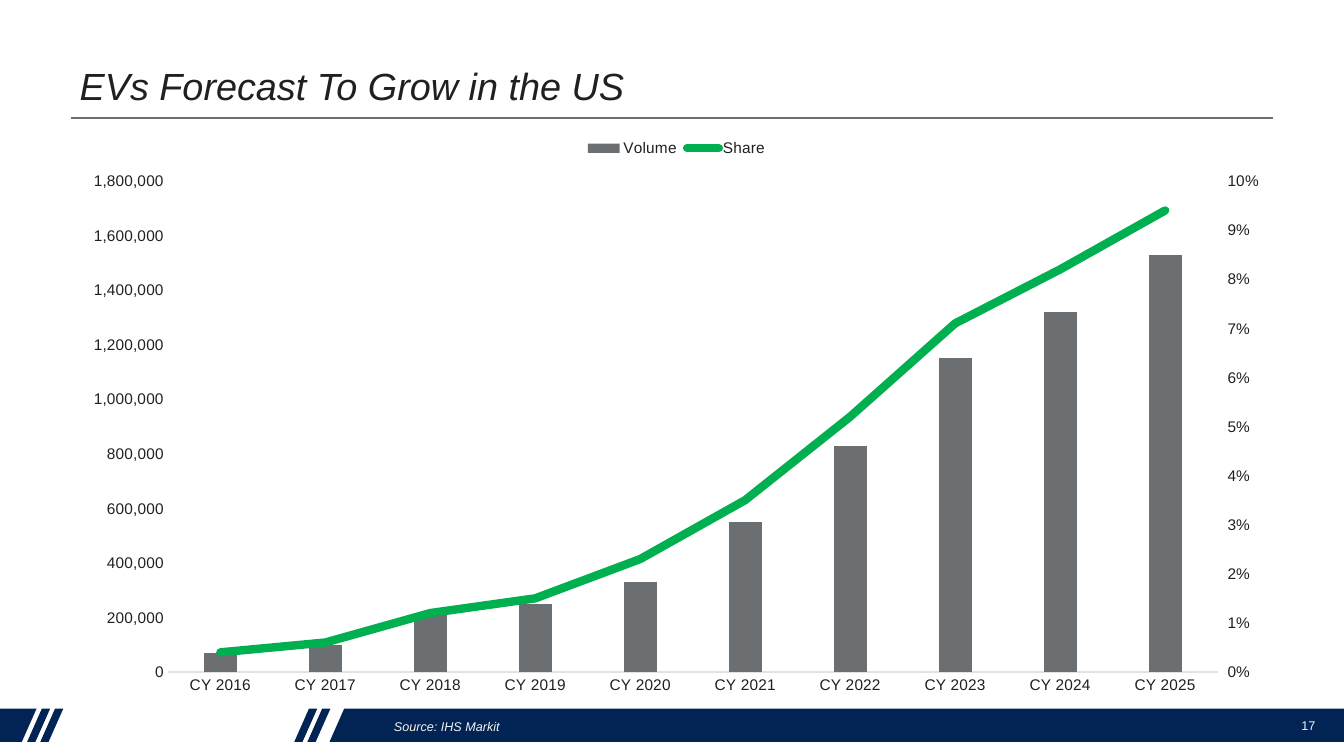
from lxml.etree import SubElement
from pptx import Presentation
from pptx.chart.data import CategoryChartData
from pptx.dml.color import RGBColor
from pptx.enum.chart import XL_CHART_TYPE as ChartType
from pptx.enum.chart import XL_LEGEND_POSITION as LegendPosition
from pptx.enum.chart import XL_TICK_MARK as TickMark
from pptx.enum.shapes import MSO_CONNECTOR as Connector
from pptx.enum.text import MSO_ANCHOR as Anchor
from pptx.enum.text import PP_ALIGN as Align
from pptx.oxml import parse_xml
from pptx.oxml.ns import nsdecls, qn
from pptx.util import Pt

# Content
TITLE = "EVs Forecast To Grow in the US"
SOURCE = "Source: IHS Markit"
PAGE_NUMBER = "17"
YEARS = [f"CY {year}" for year in range(2016, 2026)]
VOLUME = [70000, 100000, 210000, 250000, 330000,
          550000, 830000, 1150000, 1320000, 1530000]
SHARE = [0.004, 0.006, 0.012, 0.015, 0.023, 0.035, 0.052, 0.071, 0.082, 0.094]

# Style
FONT = "Arial"
INK = RGBColor(0x20, 0x20, 0x20)
GRAY = RGBColor(0x6C, 0x6F, 0x71)
GREEN = RGBColor(0x00, 0xB0, 0x50)
NAVY = RGBColor(0x02, 0x24, 0x54)
PALE = RGBColor(0xF2, 0xF2, 0xF2)
AXIS_LINE = RGBColor(0xE2, 0xE2, 0xE2)
TITLE_STYLE = {"name": FONT, "size": Pt(27), "italic": True}
SOURCE_STYLE = {"name": FONT, "size": Pt(9), "italic": True}
NUMBER_STYLE = {"name": FONT, "size": Pt(9)}
CHART_STYLE = {"name": FONT, "size": Pt(11)}

# Geometry in points
WIDTH, HEIGHT = 960, 540
BAND_TOP, BAND_BOTTOM = 506.2, 529.9
SLANT = 10.5
SLASH_WIDTH = 5.9
SLASH_LEFTS = [19.4, 28.8, 210.2, 219.6]
LEFT_BLOCK_END, RIGHT_BLOCK_START = 15.6, 235.4
PLOT_LAYOUT = {"x": 0.081, "y": 0.092, "w": 0.865, "h": 0.85}


def style_font(font, style, color):
    for name, value in style.items():
        setattr(font, name, value)
    font.color.rgb = color


def fill_text(box, text, style, color, align=Align.LEFT):
    frame = box.text_frame
    frame.word_wrap = True
    frame.vertical_anchor = Anchor.MIDDLE
    para = frame.paragraphs[0]
    para.alignment = align
    span = para.add_run()
    span.text = text
    style_font(span.font, style, color)


def add_band_piece(page, top_left, top_right, bottom_right, bottom_left):
    builder = page.shapes.build_freeform(Pt(top_left), Pt(BAND_TOP))
    builder.add_line_segments([(Pt(top_right), Pt(BAND_TOP)),
                               (Pt(bottom_right), Pt(BAND_BOTTOM)),
                               (Pt(bottom_left), Pt(BAND_BOTTOM))])
    piece = builder.convert_to_shape()
    piece.shadow.inherit = False
    piece.fill.solid()
    piece.fill.fore_color.rgb = NAVY
    piece.line.fill.background()


def add_footer_band(page):
    for left in SLASH_LEFTS:
        right = left + SLASH_WIDTH
        add_band_piece(page, left + SLANT, right + SLANT, right, left)
    add_band_piece(page, 0, LEFT_BLOCK_END + SLANT, LEFT_BLOCK_END, 0)
    add_band_piece(page, RIGHT_BLOCK_START + SLANT, WIDTH, WIDTH, RIGHT_BLOCK_START)


def move_share_to_line(chart):
    """Draw the second series as a line on a right-hand percent axis."""
    share = chart.plots[0].series[1]
    share.format.line.color.rgb = GREEN
    share.format.line.width = Pt(6)
    series = share.format.line._get_or_add_ln().getparent().getparent()
    outline = series.find(qn("c:spPr")).find(qn("a:ln"))
    outline.set("cap", "rnd")
    SubElement(outline, qn("a:round"))
    for flag in series.findall(qn("c:invertIfNegative")):
        series.remove(flag)
    series.find(qn("c:spPr")).addnext(parse_xml(
        f'<c:marker {nsdecls("c")}><c:symbol val="none"/></c:marker>'))
    SubElement(series, qn("c:smooth")).set("val", "0")

    line_plot = parse_xml(
        f'<c:lineChart {nsdecls("c")}><c:grouping val="standard"/>'
        '<c:varyColors val="0"/><c:marker val="1"/>'
        '<c:axId val="5001"/><c:axId val="5002"/></c:lineChart>')
    line_plot.insert(2, series)
    plot_area = chart.plots[0]._element.getparent()
    plot_area.find(qn("c:barChart")).addnext(line_plot)
    hidden_axis = parse_xml(
        f'<c:catAx {nsdecls("c")}><c:axId val="5001"/>'
        '<c:scaling><c:orientation val="minMax"/></c:scaling>'
        '<c:delete val="1"/><c:axPos val="b"/><c:crossAx val="5002"/></c:catAx>')
    share_axis = parse_xml(
        f'<c:valAx {nsdecls("c", "a")}><c:axId val="5002"/>'
        '<c:scaling><c:orientation val="minMax"/><c:max val="0.1"/><c:min val="0"/></c:scaling>'
        '<c:delete val="0"/><c:axPos val="r"/>'
        '<c:numFmt formatCode="0%" sourceLinked="0"/>'
        '<c:majorTickMark val="out"/><c:minorTickMark val="none"/>'
        '<c:tickLblPos val="nextTo"/><c:spPr><a:ln><a:noFill/></a:ln></c:spPr>'
        f'<c:txPr><a:bodyPr/><a:p><a:pPr><a:defRPr sz="1100"><a:solidFill>'
        f'<a:srgbClr val="{INK}"/></a:solidFill><a:latin typeface="{FONT}"/>'
        '</a:defRPr></a:pPr><a:endParaRPr lang="en-US"/></a:p></c:txPr>'
        '<c:crossAx val="5001"/><c:crosses val="max"/>'
        '<c:majorUnit val="0.01"/></c:valAx>')
    plot_area.find(qn("c:valAx")).addnext(hidden_axis)
    hidden_axis.addnext(share_axis)


def set_plot_layout(chart):
    plot_area = chart.plots[0]._element.getparent()
    for old in plot_area.findall(qn("c:layout")):
        plot_area.remove(old)
    sizes = "".join(f'<c:{key} val="{value}"/>' for key, value in PLOT_LAYOUT.items())
    plot_area.insert(0, parse_xml(
        f'<c:layout {nsdecls("c")}><c:manualLayout><c:layoutTarget val="inner"/>'
        f'<c:xMode val="edge"/><c:yMode val="edge"/>{sizes}</c:manualLayout></c:layout>'))


def add_forecast_chart(page):
    data = CategoryChartData()
    data.categories = YEARS
    data.add_series("Volume", VOLUME, "#,##0")
    data.add_series("Share", SHARE, "0%")
    chart = page.shapes.add_chart(ChartType.COLUMN_CLUSTERED, Pt(49.7), Pt(91.4),
                                  Pt(866.9), Pt(412.6), data).chart
    style_font(chart.font, CHART_STYLE, INK)
    chart.has_title = False
    chart.has_legend = True
    chart.legend.position = LegendPosition.TOP
    chart.legend.include_in_layout = False
    style_font(chart.legend.font, CHART_STYLE, INK)

    bars = chart.plots[0]
    bars.gap_width = 219
    bars.vary_by_categories = False
    bars.series[0].format.fill.solid()
    bars.series[0].format.fill.fore_color.rgb = GRAY

    years, volume = chart.category_axis, chart.value_axis
    for axis in (years, volume):
        axis.major_tick_mark = axis.minor_tick_mark = TickMark.NONE
        axis.has_major_gridlines = False
        style_font(axis.tick_labels.font, CHART_STYLE, INK)
    years.format.line.color.rgb = AXIS_LINE
    years.format.line.width = Pt(0.75)
    volume.format.line.fill.background()
    volume.minimum_scale, volume.maximum_scale = 0, 1800000
    volume.major_unit = 200000
    volume.tick_labels.number_format = "#,##0"
    volume.tick_labels.number_format_is_linked = False
    move_share_to_line(chart)
    set_plot_layout(chart)


def main():
    deck = Presentation()
    deck.slide_width, deck.slide_height = Pt(WIDTH), Pt(HEIGHT)
    page = deck.slides.add_slide(deck.slide_layouts[5])

    # Footer band and title rule
    add_footer_band(page)
    rule = page.shapes.add_connector(Connector.STRAIGHT, Pt(50.4), Pt(84.2),
                                     Pt(909.4), Pt(84.2))
    rule.line.color.rgb = GRAY
    rule.line.width = Pt(1)
    SubElement(rule._element.spPr, qn("a:effectLst"))

    # Title, source and page number
    title = page.shapes.title
    title.left, title.top, title.width, title.height = Pt(49.7), Pt(31), Pt(908.6), Pt(59.8)
    fill_text(title, TITLE, TITLE_STYLE, INK)
    source = page.shapes.add_textbox(Pt(274.3), Pt(506.9), Pt(569.5), Pt(23.8))
    fill_text(source, SOURCE, SOURCE_STYLE, PALE)
    number = page.shapes.add_textbox(Pt(917.3), Pt(504), Pt(34.6), Pt(28.8))
    fill_text(number, PAGE_NUMBER, NUMBER_STYLE, PALE, Align.CENTER)

    # Volume and share chart
    add_forecast_chart(page)
    deck.save("out.pptx")


if __name__ == "__main__":
    main()
